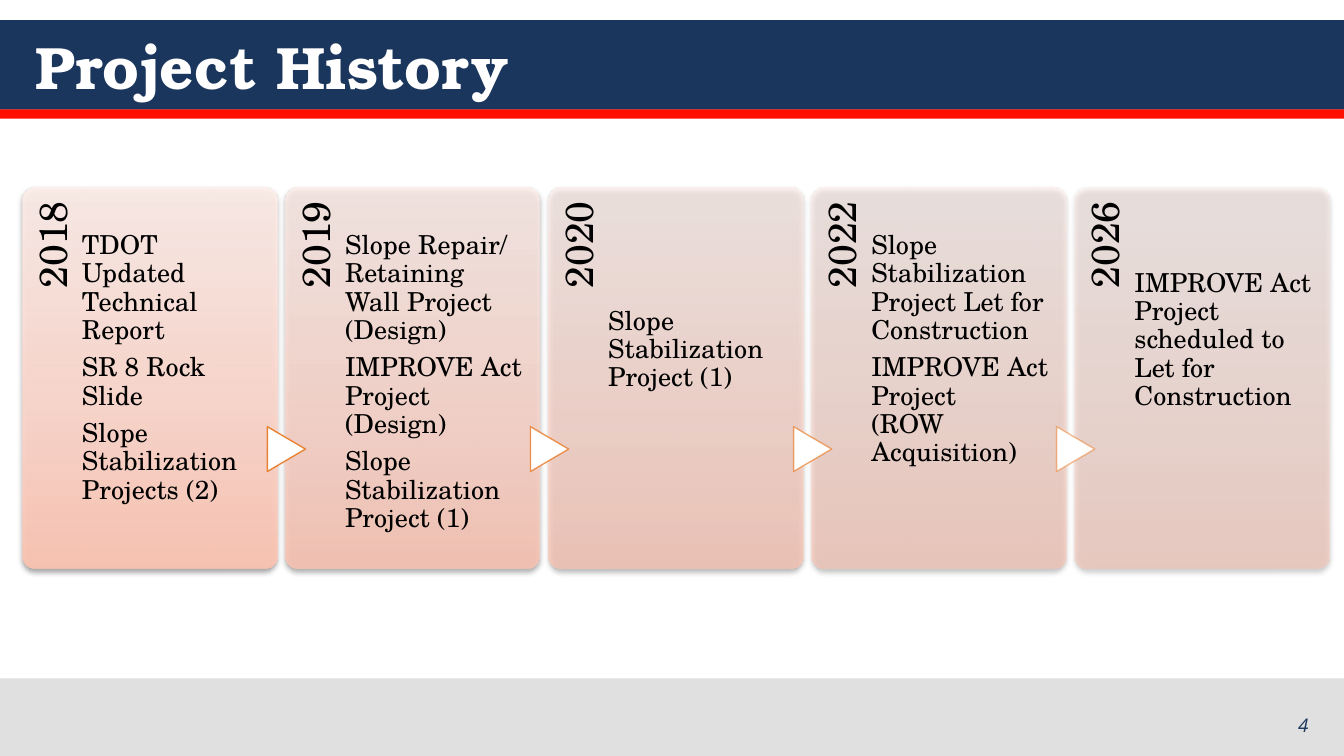
import pptx
import pptx.dml.color
import pptx.enum.shapes
import pptx.enum.text
import pptx.oxml
import pptx.oxml.ns
import pptx.util

Pt = pptx.util.Pt
RGBColor = pptx.dml.color.RGBColor
MSO_SHAPE = pptx.enum.shapes.MSO_SHAPE
PP_ALIGN = pptx.enum.text.PP_ALIGN
MSO_ANCHOR = pptx.enum.text.MSO_ANCHOR
qn = pptx.oxml.ns.qn

NAVY = RGBColor(0x1B, 0x36, 0x5D)
RED = RGBColor(0xFF, 0x0F, 0x00)
GREY = RGBColor(0xE0, 0xE0, 0xE0)
WHITE = RGBColor(0xFF, 0xFF, 0xFF)
BLACK = RGBColor(0x00, 0x00, 0x00)
ORANGE = RGBColor(0xE8, 0x77, 0x22)
CARD_STOPS = [
    (0, RGBColor(0xFF, 0xC4, 0xB2)),
    (35, RGBColor(0xFF, 0xD5, 0xC9)),
    (100, RGBColor(0xFF, 0xEF, 0xEB)),
]

TITLE = "Project History"
PAGE_NUMBER = "4"
BANDS = [(10.8, 48, NAVY), (58.6, 5, RED), (363.4, 41.6, GREY)]
MILESTONES = [
    {"year": "2018", "card_alpha": 90, "arrow_alpha": None, "lines_down": 1,
     "events": ["TDOT Updated Technical Report", "SR 8 Rock Slide",
                "Slope Stabilization Projects (2)"]},
    {"year": "2019", "card_alpha": 80, "arrow_alpha": 90, "lines_down": 1,
     "events": ["Slope Repair/ Retaining Wall Project (Design)",
                "IMPROVE Act Project (Design)", "Slope Stabilization Project (1)"]},
    {"year": "2020", "card_alpha": 70, "arrow_alpha": 77, "lines_down": 3,
     "events": ["Slope Stabilization Project (1)"]},
    {"year": "2022", "card_alpha": 60, "arrow_alpha": 63, "lines_down": 1,
     "events": ["Slope Stabilization Project Let for Construction",
                "IMPROVE Act Project\n(ROW Acquisition)"]},
    {"year": "2026", "card_alpha": 50, "arrow_alpha": 50, "lines_down": 2,
     "events": ["IMPROVE Act Project scheduled to Let for Construction"]},
]

SLIDE_WIDTH, SLIDE_HEIGHT = 720, 405
CARD_LEFT, CARD_TOP = 12.1, 100.6
CARD_WIDTH, CARD_HEIGHT = 136.2, 204
CARD_STEP = 140.95
LINE_STEP = 20.2
NS = 'xmlns:a="http://schemas.openxmlformats.org/drawingml/2006/main"'


def add_block(slide, preset, box, color):
    block = slide.shapes.add_shape(preset, *map(Pt, box))
    block.shadow.inherit = False
    block.fill.solid()
    block.fill.fore_color.rgb = color
    block.line.fill.background()
    return block


def add_text(slide, box, paragraphs, font, size, color, insets=(7.2, 3.6, 7.2, 3.6),
             anchor=MSO_ANCHOR.TOP, align=PP_ALIGN.LEFT, bold=False, italic=False,
             line_spacing=1.0, space_after=0):
    holder = slide.shapes.add_textbox(*map(Pt, box))
    frame = holder.text_frame
    frame.word_wrap = True
    frame.vertical_anchor = anchor
    frame.margin_left, frame.margin_top, frame.margin_right, frame.margin_bottom = map(Pt, insets)
    for index, content in enumerate(paragraphs):
        paragraph = frame.add_paragraph() if index else frame.paragraphs[0]
        paragraph.alignment = align
        paragraph.line_spacing = line_spacing
        paragraph.space_after = Pt(space_after)
        for part, words in enumerate(content.split("\n")):
            if part:
                paragraph.add_line_break()
            run = paragraph.add_run()
            run.text = words
            run.font.name = font
            run.font.size = Pt(size)
            run.font.bold = bold
            run.font.italic = italic
            run.font.color.rgb = color
    return holder


def add_card(slide, left, alpha):
    card = add_block(slide, MSO_SHAPE.ROUNDED_RECTANGLE,
                     (left, CARD_TOP, CARD_WIDTH, CARD_HEIGHT), WHITE)
    card.adjustments[0] = 0.05
    card.fill.gradient()
    card.fill.gradient_angle = 90
    properties = card.element.spPr
    stops = properties.find(".//" + qn("a:gsLst"))
    for stop in list(stops):
        stops.remove(stop)
    for position, color in CARD_STOPS:
        stops.append(pptx.oxml.parse_xml(
            f'<a:gs {NS} pos="{position * 1000}"><a:srgbClr val="{color}">'
            f'<a:alpha val="{alpha * 1000}"/></a:srgbClr></a:gs>'))
    properties.find(qn("a:effectLst")).append(pptx.oxml.parse_xml(
        f'<a:outerShdw {NS} blurRad="{Pt(3.1)}" dist="{Pt(1.6)}" dir="5400000" rotWithShape="0">'
        f'<a:srgbClr val="{BLACK}"><a:alpha val="38000"/></a:srgbClr></a:outerShdw>'))


def add_arrow(slide, left, alpha):
    arrow = add_block(slide, MSO_SHAPE.FLOWCHART_EXTRACT, (left - 11.6, 230.4, 24, 20.4), WHITE)
    arrow.rotation = 90
    arrow.line.color.rgb = ORANGE
    arrow.line.width = Pt(0.75)
    line_color = arrow.element.spPr.find(qn("a:ln")).find(".//" + qn("a:srgbClr"))
    line_color.append(pptx.oxml.parse_xml(f'<a:alpha {NS} val="{alpha * 1000}"/>'))


def add_milestone(slide, index, milestone):
    left = CARD_LEFT + index * CARD_STEP
    add_card(slide, left, milestone["card_alpha"])
    year = add_text(slide, (left - 69.9, 170.6, 167, 27.4), [milestone["year"]],
                    "TeX Gyre Schola", 21, BLACK, insets=(0, 5.8, 7.2, 0),
                    align=PP_ALIGN.RIGHT, line_spacing=0.9)
    year.rotation = 270
    if milestone["arrow_alpha"]:
        add_arrow(slide, left, milestone["arrow_alpha"])
    drop = milestone["lines_down"] * LINE_STEP
    add_text(slide, (left + 27.3, CARD_TOP + drop, 101.5, CARD_HEIGHT - drop),
             milestone["events"], "TeX Gyre Schola", 14, BLACK, insets=(4.5, 3.6, 0, 0),
             line_spacing=0.9, space_after=4.9)


def main():
    presentation = pptx.Presentation()
    presentation.slide_width = Pt(SLIDE_WIDTH)
    presentation.slide_height = Pt(SLIDE_HEIGHT)
    slide = presentation.slides.add_slide(presentation.slide_layouts[6])
    for top, height, color in BANDS:
        add_block(slide, MSO_SHAPE.RECTANGLE, (0, top, SLIDE_WIDTH, height), color)
    add_text(slide, (12, 10.8, 696, 49), [TITLE], "TeX Gyre Bonum", 32, WHITE,
             anchor=MSO_ANCHOR.MIDDLE, bold=True)
    add_text(slide, (540, 376.6, 168, 21.6), [PAGE_NUMBER], "Open Sans", 10, NAVY,
             anchor=MSO_ANCHOR.BOTTOM, align=PP_ALIGN.RIGHT, italic=True)
    for index, milestone in enumerate(MILESTONES):
        add_milestone(slide, index, milestone)
    presentation.save("out.pptx")


if __name__ == "__main__":
    main()
